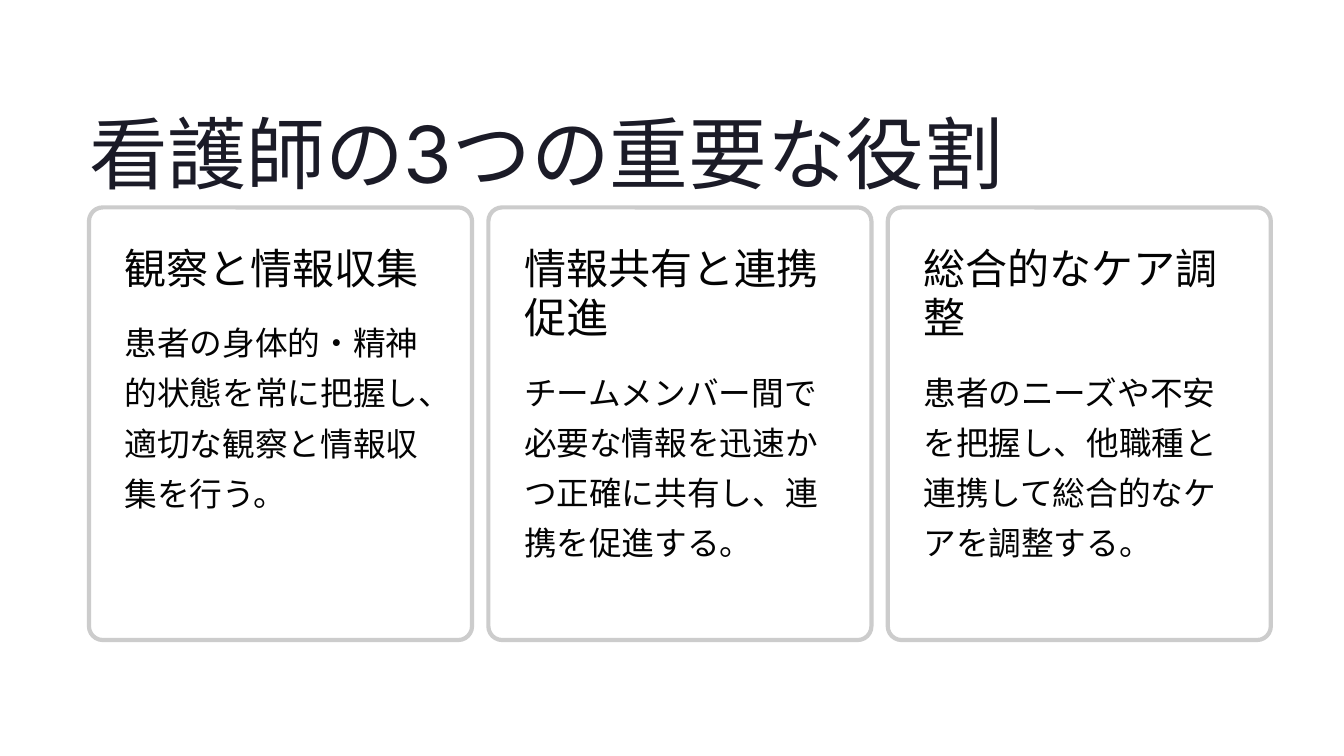
"""Build a slide with the three key roles of a nurse."""
from math import ceil

from lxml.etree import SubElement
from pptx import Presentation
from pptx.dml.color import RGBColor
from pptx.enum.shapes import MSO_SHAPE as Preset
from pptx.enum.text import MSO_AUTO_SIZE as AutoSize
from pptx.oxml.ns import qn
from pptx.util import Pt

TITLE = "看護師の3つの重要な役割"
ROLES = [
    ("観察と情報収集", "患者の身体的・精神的状態を常に把握し、適切な観察と情報収集を行う。"),
    ("情報共有と連携促進", "チームメンバー間で必要な情報を迅速かつ正確に共有し、連携を促進する。"),
    ("総合的なケア調整", "患者のニーズや不安を把握し、他職種と連携して総合的なケアを調整する。"),
]

INK, TITLE_INK, WHITE, BORDER = "030303", "1B1B27", "FFFFFF", "CCCCCC"
TITLE_STYLE = {"name": "Inter", "size": Pt(67.5)}
HEADING_STYLE = {"name": "Inter", "size": Pt(36)}
BODY_STYLE = {"name": "Roboto", "size": Pt(28)}
FRAME_STYLE = {
    "margin_left": 0, "margin_top": 0, "margin_right": 0, "margin_bottom": 0,
    "word_wrap": True, "auto_size": AutoSize.NONE,
}

LEFT, CARD_TOP, CARD_WIDTH, CARD_HEIGHT = 76.3, 177.8, 328.3, 370.8
PITCH, INSET, TEXT_WIDTH = 342.35, 30.6, 264.2
HEADING_LINE, HEADING_CHARS, BODY_GAP = 42.4, 7, 16.3
TITLE_BOUNDS = (LEFT, 86.4, 860, 85)


def color(value):
    return RGBColor.from_string(value)


def apply(target, values):
    for name, value in values.items():
        setattr(target, name, value)


def add_text(page, text, bounds, style, ink, spacing):
    box = page.shapes.add_textbox(*map(Pt, bounds))
    frame = box.text_frame
    apply(frame, FRAME_STYLE)
    para = frame.paragraphs[0]
    para.line_spacing = Pt(spacing)
    span = para.add_run()
    span.text = text
    apply(span.font, style)
    span.font.color.rgb = color(ink)


def add_card(page, left):
    bounds = (left, CARD_TOP, CARD_WIDTH, CARD_HEIGHT)
    card = page.shapes.add_shape(Preset.ROUNDED_RECTANGLE, *map(Pt, bounds))
    card.shadow.inherit = False
    card.adjustments[0] = 0.036
    card.fill.solid()
    card.fill.fore_color.rgb = color(WHITE)
    tint = next(card.element.spPr.iter(qn("a:srgbClr")))
    SubElement(tint, qn("a:alpha"), val="95000")
    card.line.color.rgb = color(BORDER)
    card.line.width = Pt(3.6)


def add_role(page, index, heading, body):
    left = LEFT + index * PITCH
    add_card(page, left)
    text_left, heading_top = left + INSET, CARD_TOP + INSET + 0.4
    lines = ceil(len(heading) / HEADING_CHARS)
    heading_height = lines * 46.8
    body_top = heading_top + lines * HEADING_LINE + BODY_GAP
    add_text(page, heading, (text_left, heading_top, TEXT_WIDTH, heading_height),
             HEADING_STYLE, INK, 42)
    add_text(page, body, (text_left, body_top, TEXT_WIDTH, 191.5),
             BODY_STYLE, INK, 43)


def main():
    deck = Presentation()
    apply(deck, {"slide_width": Pt(1152), "slide_height": Pt(648)})
    page = deck.slides.add_slide(deck.slide_layouts[6])
    add_text(page, TITLE, TITLE_BOUNDS, TITLE_STYLE, TITLE_INK, 84.5)
    for index, (heading, body) in enumerate(ROLES):
        add_role(page, index, heading, body)
    deck.save("out.pptx")


if __name__ == "__main__":
    main()
